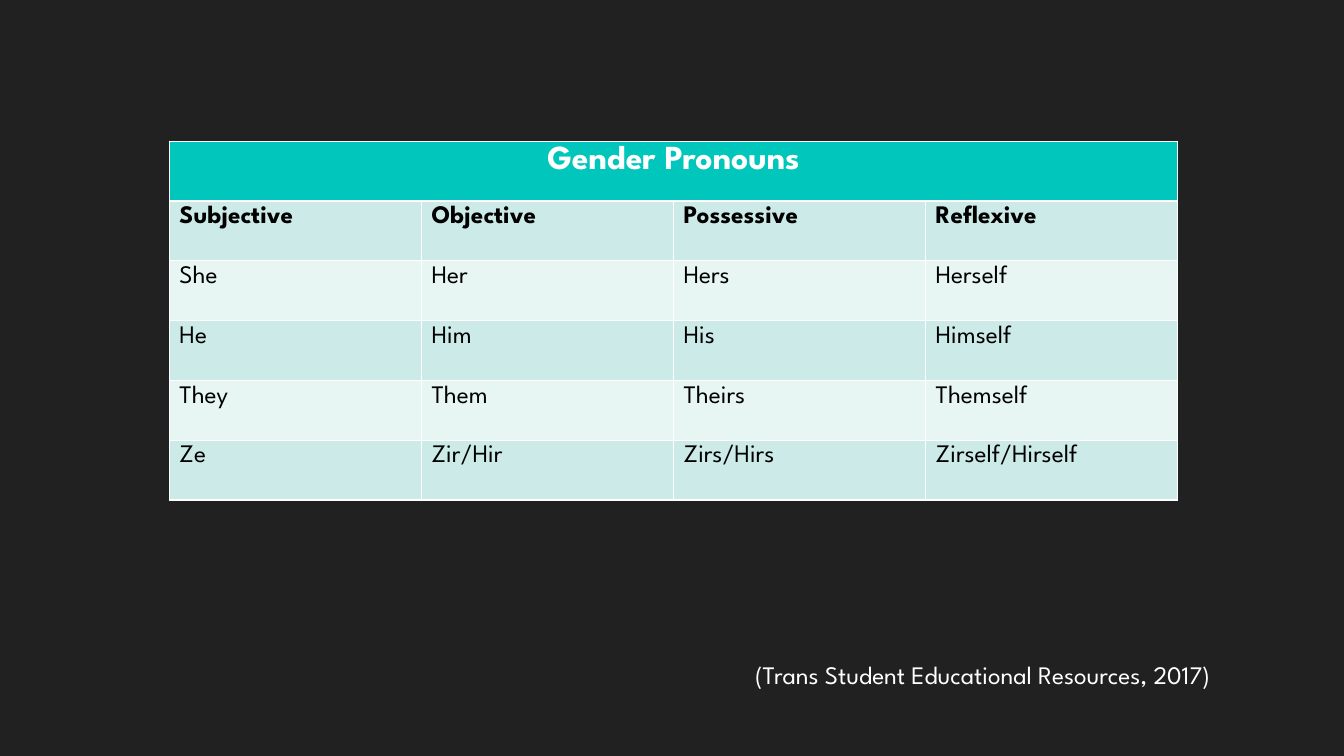
from lxml.etree import SubElement
from pptx import Presentation
from pptx.dml.color import RGBColor
from pptx.enum.text import PP_ALIGN
from pptx.oxml.ns import qn
from pptx.util import Inches, Pt

TITLE = "Gender Pronouns"
PRONOUNS = [
    ("Subjective", "Objective", "Possessive", "Reflexive"),
    ("She", "Her", "Hers", "Herself"),
    ("He", "Him", "His", "Himself"),
    ("They", "Them", "Theirs", "Themself"),
    ("Ze", "Zir/Hir", "Zirs/Hirs", "Zirself/Hirself"),
]
CITATION = "(Trans Student Educational Resources, 2017)"

FONT = "League Spartan"
BACKGROUND = RGBColor(0x21, 0x21, 0x21)
TEAL = RGBColor(0x00, 0xC6, 0xBB)
BANDS = (RGBColor(0xCC, 0xEA, 0xE7), RGBColor(0xE7, 0xF5, 0xF3))
WHITE = RGBColor(0xFF, 0xFF, 0xFF)
BLACK = RGBColor(0x00, 0x00, 0x00)


def write(text_frame, text, size, color, bold=False, align=PP_ALIGN.LEFT):
    text_frame.text = text
    paragraph = text_frame.paragraphs[0]
    paragraph.alignment = align
    font = paragraph.runs[0].font
    font.name = FONT
    font.size = Pt(size)
    font.bold = bold
    font.color.rgb = color


def style_cell(cell, fill, top=1, bottom=1):
    """Fill the cell and give it white borders, with widths in points."""
    properties = cell._tc.get_or_add_tcPr()
    for side, width in (("L", 1), ("R", 1), ("T", top), ("B", bottom)):
        line = SubElement(properties, qn(f"a:ln{side}"), w=str(Pt(width)))
        solid = SubElement(line, qn("a:solidFill"))
        SubElement(solid, qn("a:srgbClr"), val=str(WHITE))
    cell.fill.solid()
    cell.fill.fore_color.rgb = fill


def add_pronoun_table(slide):
    row_count, column_count = len(PRONOUNS) + 1, len(PRONOUNS[0])
    table = slide.shapes.add_table(
        row_count, column_count,
        Inches(1.68), Inches(1.4), Inches(10), Inches(3.56)).table

    for cell in table.rows[0].cells:
        style_cell(cell, TEAL, bottom=2.25)
    title_cell = table.cell(0, 0)
    title_cell.merge(table.cell(0, column_count - 1))
    write(title_cell.text_frame, TITLE, 24, WHITE, True, PP_ALIGN.CENTER)

    for row, words in enumerate(PRONOUNS):
        is_heading = row == 0
        for column, word in enumerate(words):
            cell = table.cell(row + 1, column)
            style_cell(cell, BANDS[row % 2], top=2.25 if is_heading else 1)
            write(cell.text_frame, word, 18, BLACK, bold=is_heading)


def add_citation(slide):
    box = slide.shapes.add_textbox(
        Inches(7.39), Inches(6.49), Inches(5.54), Inches(0.4))
    box.text_frame.word_wrap = True
    write(box.text_frame, CITATION, 18, WHITE)


def main():
    presentation = Presentation()
    presentation.slide_width = Inches(13.33)
    presentation.slide_height = Inches(7.5)
    slide = presentation.slides.add_slide(presentation.slide_layouts[6])
    slide.background.fill.solid()
    slide.background.fill.fore_color.rgb = BACKGROUND
    add_pronoun_table(slide)
    add_citation(slide)
    presentation.save("out.pptx")


if __name__ == "__main__":
    main()
